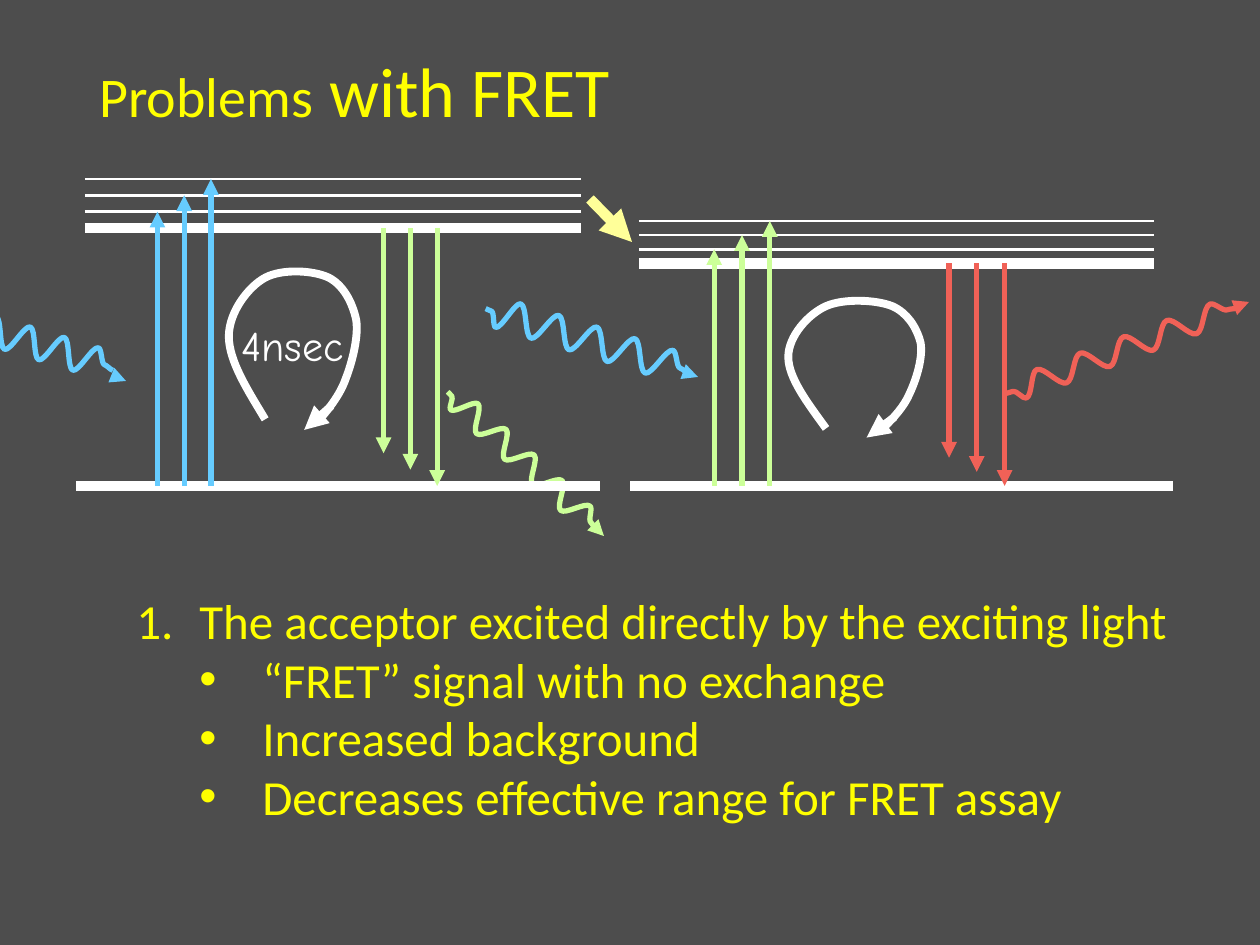
import pptx
import pptx.dml.color
import pptx.enum.shapes
import pptx.enum.text
import pptx.oxml
import pptx.oxml.ns
import pptx.util

PX = 914400 / 126
WHITE, YELLOW = "FFFFFF", "FFFF00"
BLUE, GREEN, RED, PALE = "66CCFF", "CCFF99", "F06157", "FFFF99"

# Knots of a wave: share of its length, share of half its height
WAVE = [(0, 0), (0.03, 0.05), (0.07, 1)]
WAVE += [(0.15 + 0.093 * i, (-1) ** (i + 1)) for i in range(9)]
WAVE += [(0.95, 0), (1, 0.2)]

# Bezier points of the relaxation loop, as shares of its box
LOOP = [(0.28, 1), (0.14, 0.8), (0, 0.61), (0, 0.45),
        (0, 0.29), (0.15, 0.12), (0.28, 0.06),
        (0.41, 0), (0.65, 0.01), (0.77, 0.06),
        (0.88, 0.11), (0.95, 0.22), (0.98, 0.34),
        (1, 0.45), (0.95, 0.62), (0.9, 0.73),
        (0.86, 0.83), (0.78, 0.92), (0.7, 1)]


def emu(n):
    return pptx.util.Emu(round(n * PX))


def rgb(code):
    return pptx.dml.color.RGBColor.from_string(code)


def node(parent, tag, **attrs):
    child = parent.makeelement(pptx.oxml.ns.qn(tag), attrs)
    parent.append(child)
    return child


def pen(shape, color, width):
    shape.line.color.rgb = rgb(color)
    shape.line.width = pptx.util.Pt(width)


def line(slide, start, end, color, width, arrow=False):
    kind = pptx.enum.shapes.MSO_CONNECTOR.STRAIGHT
    ends = [emu(n) for n in (*start, *end)]
    link = slide.shapes.add_connector(kind, *ends)
    pen(link, color, width)
    if arrow:
        node(link.line._get_or_add_ln(), "a:tailEnd", type="triangle")
    node(link._element.spPr, "a:effectLst")


def curve(slide, points, color, width):
    """Draw a chain of cubic Beziers: a start, then three points a piece."""
    dots = [(emu(x), emu(y)) for x, y in points]
    form = slide.shapes.build_freeform(*dots[0])
    form.add_line_segments(dots[3::3], close=False)
    shape = form.convert_to_shape()
    route = next(shape._element.iter(pptx.oxml.ns.qn("a:path")))
    for part in list(route)[1:]:
        route.remove(part)
    for i in range(1, len(dots), 3):
        bend = node(route, "a:cubicBezTo")
        for x, y in dots[i:i + 3]:
            node(bend, "a:pt", x=str(x - shape.left), y=str(y - shape.top))
    shape.fill.background()
    shape.shadow.inherit = False
    pen(shape, color, width)
    return shape


def wave(slide, box, angle, start, tip, color):
    """Draw a photon: a turned wave in its box, then its arrowhead."""
    x, y, w, h = box
    knots = [(x + u * w, y + (1 + v) * h / 2) for u, v in WAVE]
    points = [knots[0]]
    for (u, v), (p, q) in zip(knots, knots[1:]):
        third = (p - u) / 3
        points += [(u + third, v), (p - third, q), (p, q)]
    curve(slide, points, color, 3).rotation = angle
    line(slide, start, tip, color, 3, True)


def loop(slide, x, y, w, h):
    def spot(u, v):
        return x + u * w, y + v * h

    curve(slide, [spot(*p) for p in LOOP], WHITE, 4.5)
    line(slide, spot(0.79, 0.91), spot(0.58, 1.07), WHITE, 4.5, True)


def levels(slide, x, y, w, h, rise, fall):
    """Draw one dye: energy levels, excitation, relaxation and emission."""
    base, gap, step = y + h, 0.16 * h / 3, 0.054 * w
    low = y + 3 * gap
    line(slide, (x - 9, base), (x + w + 19, base), WHITE, 6)
    for i in range(4):
        line(slide, (x, low - i * gap), (x + w, low - i * gap), WHITE, 1.5 if i else 6)
    for i in range(3):
        up, down = x + 0.146 * w + i * step, x + 0.602 * w + i * step
        line(slide, (up, base), (up, low - (i + 1) * gap), rise, 3, True)
        line(slide, (down, low), (down, base - (2 - i) * gap), fall, 3, True)
    loop(slide, x + 0.29 * w, y + 0.292 * h, 0.262 * w, 0.491 * h)


def style(run, size, color, face="Calibri"):
    run.font.size = pptx.util.Pt(size)
    run.font.name = face
    run.font.color.rgb = rgb(color)


def frame(slide, box, wrap=False):
    text = slide.shapes.add_textbox(*[emu(n) for n in box]).text_frame
    text.word_wrap = wrap
    return text


def title(slide, box):
    text = frame(slide, box, True)
    text.margin_top = emu(7)
    para = text.paragraphs[0]
    para.line_spacing = 0.9
    for words, size in (("Problems", 32), (" with FRET", 40)):
        run = para.add_run()
        run.text = words
        style(run, size, YELLOW)
    para.add_line_break()


def label(slide, box):
    text = frame(slide, box)
    text.vertical_anchor = pptx.enum.text.MSO_ANCHOR.MIDDLE
    text.text = "4nsec"
    para = text.paragraphs[0]
    para.alignment = pptx.enum.text.PP_ALIGN.CENTER
    style(para.runs[0], 24, WHITE, "Comic Neue")


def points(slide, box):
    text = frame(slide, box)
    text.text = "\n".join([
        "The acceptor excited directly by the exciting light",
        "“FRET” signal with no exchange",
        "Increased background",
        "Decreases effective range for FRET assay"])
    for i, para in enumerate(text.paragraphs):
        para.level = 1 if i else 0
        prop = para._p.get_or_add_pPr()
        prop.set("marL", str(emu(126 if i else 63)))
        prop.set("indent", str(emu(-63)))
        if i:
            node(prop, "a:buFont", typeface="Arial")
            node(prop, "a:buChar", char="•")
        else:
            node(prop, "a:buFont", typeface="+mj-lt")
            node(prop, "a:buAutoNum", type="arabicPeriod")
        style(para.runs[0], 28, YELLOW)


def main():
    deck = pptx.Presentation()
    deck.slide_width, deck.slide_height = emu(1260), emu(945)
    slide = deck.slides.add_slide(deck.slide_layouts[6])
    slide.background.fill.solid()
    slide.background.fill.fore_color.rgb = rgb("4D4D4D")

    wave(slide, (481, 325, 214, 30), 17, (687, 373), (698, 377), BLUE)
    wave(slide, (421, 449, 204, 23), 42.4, (596, 528), (604, 536), GREEN)
    wave(slide, (-74, 325, 192, 29), 17, (116, 377), (126, 381), BLUE)
    levels(slide, 85, 179, 496, 307, BLUE, GREEN)
    label(slide, (223, 309, 139, 72))
    wave(slide, (998, 338, 249, 23), 339.3, (1236, 307), (1249, 302), RED)
    levels(slide, 639, 221, 515, 265, GREEN, RED)
    line(slide, (590, 199), (632, 242), PALE, 6, True)
    points(slide, (124, 584, 1067, 251))
    title(slide, (87, 50, 1086, 183))
    deck.save("out.pptx")


if __name__ == "__main__":
    main()
